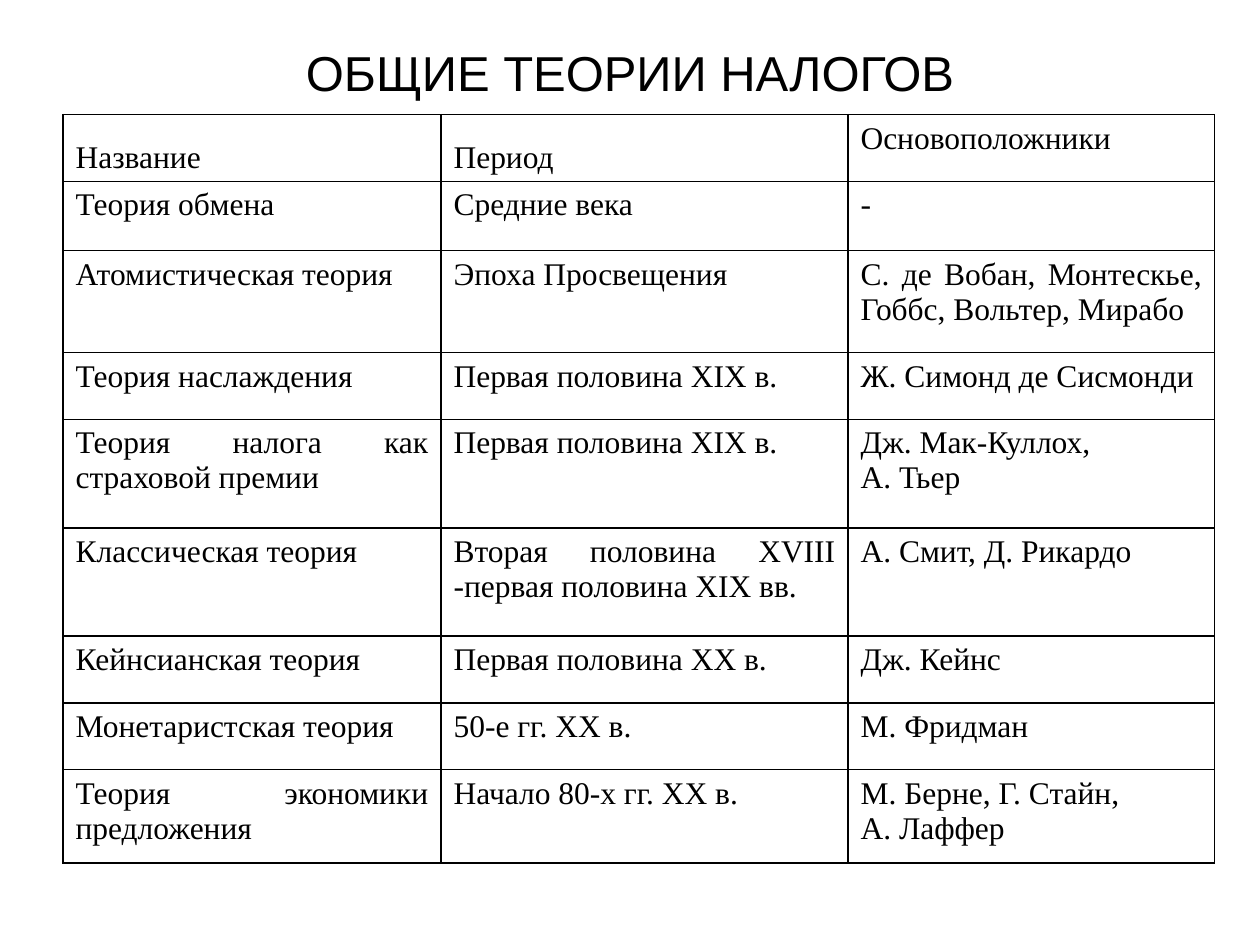
"""Build a slide with a table of general tax theories."""
from lxml import etree
from pptx import Presentation
from pptx import util as u
from pptx.dml.color import RGBColor
from pptx.enum import text
from pptx.oxml.ns import qn

COLORS = {"ink": "000000", "paper": "FFFFFF"}
TITLE_FONT = {"name": "Arial", "size": u.Pt(28), "bold": False}
CELL_FONT = {"name": "Times New Roman", "size": u.Pt(18), "bold": False}
COLUMN_WIDTHS = [3, 3.23, 2.91]
ROW_HEIGHTS = [0.53, 0.55, 0.81, 0.53, 0.86, 0.86, 0.53, 0.53, 0.74]
HANGING = u.Inches(0.38)
THEORIES = [
    ("Название", "Период", "Основоположники"),
    ("Теория обмена", "Средние века", "-"),
    ("Атомистическая теория", "Эпоха Просвещения",
     "С. де Вобан, Монтескье, Гоббс, Вольтер, Мирабо"),
    ("Теория наслаждения", "Первая половина XIX в.", "Ж. Симонд де Сисмонди"),
    ("Теория налога как страховой премии", "Первая половина XIX в.",
     "Дж. Мак-Куллох, \nА. Тьер"),
    ("Классическая теория", "Вторая половина XVIII -первая половина XIX вв.",
     "А. Смит, Д. Рикардо"),
    ("Кейнсианская теория", "Первая половина XX в.", "Дж. Кейнс"),
    ("Монетаристская теория", "50-е гг. XX в.", "М. Фридман"),
    ("Теория экономики предложения", "Начало 80-х гг. XX в.",
     "М. Берне, Г. Стайн, \nА. Лаффер"),
]
WRAPPED = {(2, 2), (4, 0), (5, 1), (8, 0)}


def format_font(font, values):
    for name, value in values.items():
        setattr(font, name, value)
    font.color.rgb = RGBColor.from_string(COLORS["ink"])


def add_borders(cell):
    properties = cell._tc.get_or_add_tcPr()
    for position, side in enumerate(("lnL", "lnR", "lnT", "lnB")):
        line = etree.Element(qn(f"a:{side}"), w=str(u.Pt(1)))
        fill = etree.SubElement(line, qn("a:solidFill"))
        etree.SubElement(fill, qn("a:srgbClr"), val=COLORS["ink"])
        properties.insert(position, line)


presentation = Presentation()
presentation.slide_width = u.Inches(10)
presentation.slide_height = u.Inches(7.5)
slide = presentation.slides.add_slide(presentation.slide_layouts[5])
slide.background.fill.solid()
slide.background.fill.fore_color.rgb = RGBColor.from_string(COLORS["paper"])

title = slide.shapes.title
title_box = {"left": 0.5, "top": 0.3, "width": 9, "height": 0.54}
for name, value in title_box.items():
    setattr(title, name, u.Inches(value))
title.text_frame.text = "ОБЩИЕ ТЕОРИИ НАЛОГОВ"
title.text_frame.vertical_anchor = text.MSO_ANCHOR.MIDDLE
title_paragraph = title.text_frame.paragraphs[0]
title_paragraph.alignment = text.PP_ALIGN.CENTER
format_font(title_paragraph.runs[0].font, TITLE_FONT)

table = slide.shapes.add_table(
    len(THEORIES), len(COLUMN_WIDTHS), u.Inches(0.5), u.Inches(0.91),
    u.Inches(sum(COLUMN_WIDTHS)), u.Inches(sum(ROW_HEIGHTS))).table
table.first_row = table.horz_banding = False
for column, width in zip(table.columns, COLUMN_WIDTHS):
    column.width = u.Inches(width)
for row, height in zip(table.rows, ROW_HEIGHTS):
    row.height = u.Inches(height)

for row_index, theory in enumerate(THEORIES):
    for column_index, wording in enumerate(theory):
        cell = table.cell(row_index, column_index)
        cell.text = wording
        cell.fill.solid()
        cell.fill.fore_color.rgb = RGBColor.from_string(COLORS["paper"])
        add_borders(cell)
        is_low = row_index == 0 and column_index < 2
        cell.vertical_anchor = text.MSO_ANCHOR.BOTTOM if is_low else text.MSO_ANCHOR.TOP
        for paragraph in cell.text_frame.paragraphs:
            paragraph.alignment = text.PP_ALIGN.JUSTIFY
            format_font(paragraph.runs[0].font, CELL_FONT)
            if (row_index, column_index) not in WRAPPED:
                properties = paragraph._p.get_or_add_pPr()
                properties.set("marL", str(HANGING))
                properties.set("indent", str(-HANGING))

presentation.save("out.pptx")
